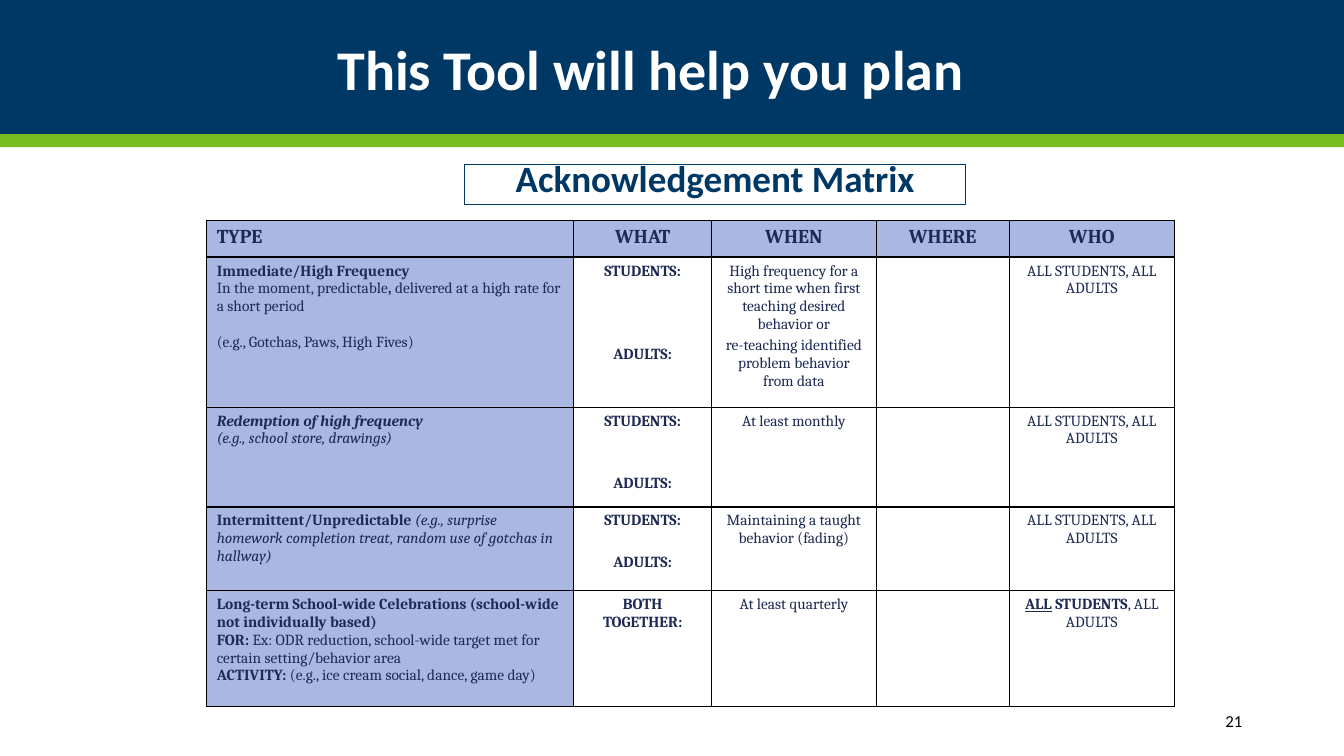
from dataclasses import dataclass

from lxml import etree
from pptx import Presentation
from pptx.dml.color import RGBColor
from pptx.enum.shapes import MSO_SHAPE
from pptx.enum.text import MSO_ANCHOR, PP_ALIGN
from pptx.oxml.ns import qn
from pptx.util import Inches, Pt

RECT = MSO_SHAPE.RECTANGLE
MIDDLE, BOTTOM = MSO_ANCHOR.MIDDLE, MSO_ANCHOR.BOTTOM
LEFT, CENTER, RIGHT = PP_ALIGN.LEFT, PP_ALIGN.CENTER, PP_ALIGN.RIGHT


@dataclass(frozen=True)
class Theme:
    """Colours, fonts and type sizes of the slide."""
    navy: str = "003865"
    green: str = "78BE21"
    lavender: str = "AAB7E1"
    ink: str = "1D2A53"
    white: str = "FFFFFF"
    black: str = "000000"
    sans: str = "Calibri"
    serif: str = "Cambria"
    title: float = 40
    subtitle: float = 26.5
    header: float = 14
    body: float = 11
    number: float = 12
    border: float = 1


class SlideBuilder:
    """Draws themed elements on the current slide."""

    def __init__(self, prs, theme):
        """Add a blank slide."""
        self.theme = theme
        self.s = prs.slides.add_slide(prs.slide_layouts[6])

    def band(self, x, y, w, h, color):
        """Add a filled rectangle without outline."""
        sp = self.s.shapes.add_shape(RECT, Inches(x), Inches(y), Inches(w), Inches(h))
        sp.shadow.inherit = False
        sp.fill.solid()
        sp.fill.fore_color.rgb = RGBColor.from_string(color)
        sp.line.fill.background()

    def run(self, p, text, size, color, font, marks=""):
        """Add a run; marks holds b, i and u for bold, italic and underline."""
        r = p.add_run()
        r.text = text
        r.font.size = Pt(size)
        r.font.name = font
        r.font.color.rgb = RGBColor.from_string(color)
        r.font.bold = "b" in marks
        r.font.italic = "i" in marks
        r.font.underline = "u" in marks

    def text(self, x, y, w, h, text, size, color, align=LEFT, anchor=MIDDLE,
             marks="", spacing=1.0, outline=None):
        """Add a one-paragraph text box."""
        sp = self.s.shapes.add_textbox(Inches(x), Inches(y), Inches(w), Inches(h))
        if outline:
            sp.line.color.rgb = RGBColor.from_string(outline)
            sp.line.width = Pt(0.75)
        tf = sp.text_frame
        tf.word_wrap = True
        tf.vertical_anchor = anchor
        p = tf.paragraphs[0]
        p.alignment = align
        p.line_spacing = spacing
        self.run(p, text, size, color, self.theme.sans, marks)

    def borders(self, cell):
        """Draw a solid line on all four sides of a cell."""
        pr = cell._tc.get_or_add_tcPr()
        for i, side in enumerate(("a:lnL", "a:lnR", "a:lnT", "a:lnB")):
            ln = etree.Element(qn(side), w=str(Pt(self.theme.border)))
            fill = etree.SubElement(ln, qn("a:solidFill"))
            etree.SubElement(fill, qn("a:srgbClr"), val=self.theme.black)
            pr.insert(i, ln)

    def cell(self, cell, paragraphs, size, align, fill):
        """Fill one cell with (space before, runs) paragraphs."""
        if fill:
            cell.fill.solid()
            cell.fill.fore_color.rgb = RGBColor.from_string(fill)
        else:
            cell.fill.background()
        self.borders(cell)
        tf = cell.text_frame
        for i, (before, runs) in enumerate(paragraphs):
            p = tf.add_paragraph() if i else tf.paragraphs[0]
            p.alignment = align
            if before:
                p.space_before = Pt(before)
            for text, marks in runs:
                self.run(p, text, size, self.theme.ink, self.theme.serif, marks)

    def matrix(self, x, y, widths, heights, rows):
        """Add a table whose header row and first column are tinted."""
        t = self.theme
        frame = self.s.shapes.add_table(len(rows), len(widths), Inches(x), Inches(y),
                                        Inches(sum(widths)), Inches(sum(heights)))
        table = frame.table
        table.first_row = table.horz_banding = False
        for column, width in zip(table.columns, widths):
            column.width = Inches(width)
        for i, (height, row) in enumerate(zip(heights, rows)):
            table.rows[i].height = Inches(height)
            for j, paragraphs in enumerate(row):
                tinted = i == 0 or j == 0
                self.cell(table.cell(i, j), paragraphs,
                          t.body if i else t.header,
                          CENTER if j else LEFT,
                          t.lavender if tinted else None)


def para(*runs, before=0):
    """Return a paragraph made of (text, marks) runs."""
    return before, runs


def plain(*texts):
    """Return regular paragraphs, each after the first set slightly apart."""
    return [para((text, ""), before=2.2 if i else 0) for i, text in enumerate(texts)]


def audiences(gap_lines):
    """Return the two audience labels parted by a number of lines."""
    return [para(("STUDENTS:", "b")),
            para(("ADULTS:", "b"), before=2.2 + 14.8 * gap_lines)]


EVERYONE = plain("ALL STUDENTS, ALL ADULTS")
MATRIX = [
    [[para((name, "b"))] for name in ("TYPE", "WHAT", "WHEN", "WHERE", "WHO")],
    [[para(("Immediate/High Frequency", "b")),
      para(("In the moment, predictable", ""), (", ", "b"),
           ("delivered at a high rate for a short period", "")),
      para(("(e.g., Gotchas, Paws, High Fives)", ""), before=12.6)],
     audiences(3),
     plain("High frequency for a short time when first teaching desired behavior or",
           "re-teaching identified problem behavior from data"),
     [], EVERYONE],
    [[para(("Redemption of high frequency", "bi")),
      para(("(e.g., school store, drawings)", "i"))],
     audiences(2), plain("At least monthly"), [], EVERYONE],
    [[para(("Intermittent/Unpredictable ", "b"),
           ("(e.g., surprise homework completion treat, random use of gotchas "
            "in hallway)", "i"))],
     audiences(1), plain("Maintaining a taught behavior (fading)"), [], EVERYONE],
    [[para(("Long-term School-wide Celebrations (school-wide not individually "
            "based)", "b")),
      para(("FOR:", "b"), (" Ex: ODR reduction, school-wide target met for certain "
                           "setting/behavior area", "")),
      para(("ACTIVITY:", "b"), (" (e.g., ice cream social, dance, game day)", ""))],
     [para(("BOTH TOGETHER:", "b"))], plain("At least quarterly"), [],
     [para(("ALL", "bu"), (" STUDENTS", "b"), (", ALL ADULTS", ""))]],
]


def main():
    """Build and save the slide."""
    prs = Presentation()
    prs.slide_width, prs.slide_height = Inches(13.33), Inches(7.5)
    t = Theme()
    b = SlideBuilder(prs, t)
    b.band(0, 0, 13.33, 1.33, t.navy)
    b.band(0, 1.33, 13.33, 0.13, t.green)
    b.text(3.25, 0.22, 9.83, 1, "This Tool will help you plan", t.title, t.white,
           marks="b", spacing=0.9)
    b.text(4.61, 1.63, 4.97, 0.4, "Acknowledgement Matrix", t.subtitle, t.navy,
           CENTER, BOTTOM, "b", 0.8, t.navy)
    b.text(10.82, 6.95, 1.6, 0.4, "21", t.number, t.black, RIGHT)
    b.matrix(2.05, 2.19, [3.64, 1.37, 1.63, 1.32, 1.64],
             [0.36, 1.49, 0.99, 0.83, 1.15], MATRIX)
    prs.save("out.pptx")


if __name__ == "__main__":
    main()
